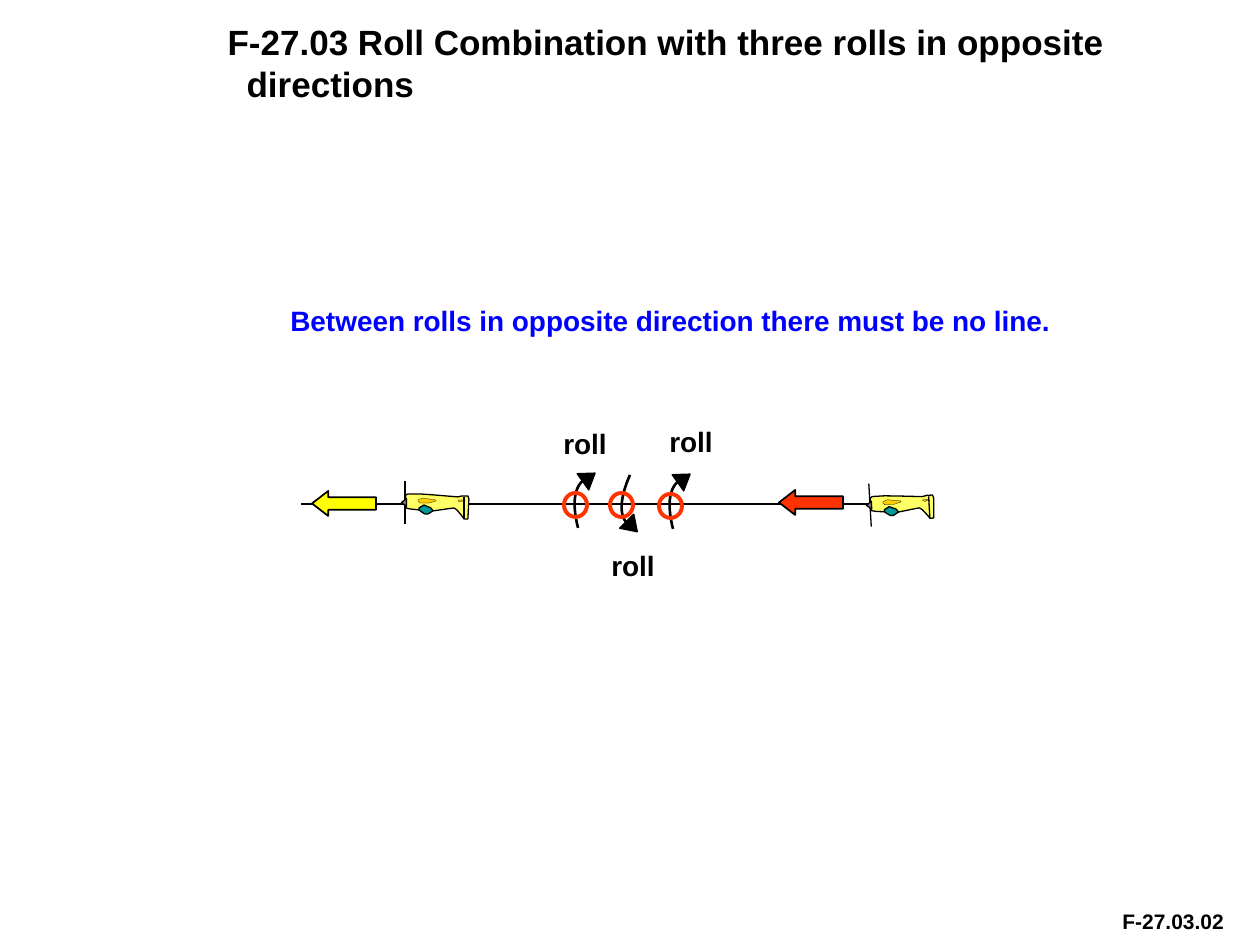
from lxml import etree
from pptx import Presentation
from pptx import util as u
from pptx.dml.color import RGBColor
from pptx.enum import shapes, text
from pptx.oxml.ns import qn

SCALE = u.Inches(1) / 126
BLACK, RED, GOLD = "000000", "FF3300", "FFCC00"

FUSELAGE = [(14, 29), (5, 28), (1, 27), (0, 25), (0, 19), (1, 14), (3, 13), (15, 13),
            (29, 14), (53, 16), (57, 15), (63, 15), (64, 18), (63, 38), (59, 38),
            (57, 35), (52, 29), (49, 27), (28, 30), (26, 28), (19, 25), (16, 26)]
WING = [(28, 30), (26, 27), (19, 24), (14, 27), (14, 29), (18, 32), (20, 33), (23, 33)]
FAR_WING = [(31, 19), (31, 20), (24, 22), (15, 22), (13, 20), (13, 19), (15, 18),
            (18, 17), (24, 18)]
TAILPLANE = [(60, 20), (57, 19), (53, 19), (53, 20), (55, 21), (57, 20)]
PLANE_PARTS = [(FUSELAGE, "FFFF66", 0.75), (WING, "009999", 0.75),
               (FAR_WING, GOLD, 0.13), (TAILPLANE, GOLD, 0.13)]
PLANE_LINES = [((0, 0), (0, 21)), ((59, 16), (59, 38)), ((0, 22), (0, 43))]

ROLL_UP = {"curve": [(14, 35), (8, 11), (10, -6), (20, -13)],
           "tip": (15, -23), "angle": 54.5}
ROLL_DOWN = {"curve": [(20, -18), (10, 5), (9, 22), (17, 30)],
             "tip": (12, 26), "angle": 135}


def px(length):
    """Turn a length in px into EMU."""
    return u.Emu(round(length * SCALE))


def colour(value):
    """Turn a hex string into a colour."""
    return RGBColor.from_string(value)


def shift(points, x, y):
    """Move points by an offset."""
    return [(x + left, y + top) for left, top in points]


def paint(shape, fill, line, width):
    """Give a shape its fill and line, without shadow."""
    shape.shadow.inherit = False
    if fill:
        shape.fill.solid()
        shape.fill.fore_color.rgb = colour(fill)
    else:
        shape.fill.background()
    shape.line.color.rgb = colour(line)
    shape.line.width = u.Pt(width)


def add_preset(parent, kind, box, fill=None, line=BLACK, width=0.75, angle=0):
    """Add a preset shape in a px box."""
    shape = parent.shapes.add_shape(kind, *map(px, box))
    paint(shape, fill, line, width)
    shape.rotation = angle
    return shape


def add_outline(parent, points, fill=None, width=0.75, close=True):
    """Add a freeform through px points."""
    start, *rest = [(px(x), px(y)) for x, y in points]
    builder = parent.shapes.build_freeform(*start, scale=1.0)
    builder.add_line_segments(rest, close=close)
    paint(builder.convert_to_shape(), fill, BLACK, width)


def add_line(parent, start, end):
    """Add a thin straight line between two px points."""
    line = parent.shapes.add_connector(
        shapes.MSO_CONNECTOR.STRAIGHT, *map(px, start + end))
    line.line.color.rgb = colour(BLACK)
    line.line.width = u.Pt(0.75)
    etree.SubElement(line._element.spPr, qn("a:effectLst"))


def write(shape, words, size, ink=BLACK, align=text.PP_ALIGN.LEFT):
    """Write one bold paragraph into a text shape."""
    frame = shape.text_frame
    layout = {"word_wrap": True, "auto_size": text.MSO_AUTO_SIZE.NONE,
              "vertical_anchor": text.MSO_ANCHOR.TOP}
    for name, value in layout.items():
        setattr(frame, name, value)
    paragraph = frame.paragraphs[0]
    paragraph.alignment = align
    run = paragraph.add_run()
    run.text = words
    for name, value in {"name": "Arial", "size": u.Pt(size), "bold": True}.items():
        setattr(run.font, name, value)
    run.font.color.rgb = colour(ink)
    return paragraph


def add_text(slide, box, words, size, **style):
    """Add a text box in a px box."""
    write(slide.shapes.add_textbox(*map(px, box)), words, size, **style)


def set_title(slide, words):
    """Place the title with a hanging indent."""
    title = slide.shapes.title
    place = dict(zip(("left", "top", "width", "height"), map(px, (141, 14, 1087, 139))))
    for name, value in place.items():
        setattr(title, name, value)
    properties = write(title, words, 20)._p.get_or_add_pPr()
    for name, length in {"marL": 93, "indent": -19}.items():
        properties.set(name, str(px(length)))


def add_plane(slide, x, y, tilt=0):
    """Add an aeroplane flying left, grouped and tilted."""
    plane = slide.shapes.add_group_shape()
    for points, fill, width in PLANE_PARTS:
        add_outline(plane, shift(points, x, y), fill, width)
    for ends in PLANE_LINES:
        add_line(plane, *shift(ends, x, y))
    add_preset(plane, shapes.MSO_SHAPE.ISOSCELES_TRIANGLE, (x - 5, y + 19, 8, 5),
               "808080", angle=270)
    plane.rotation = tilt


def bezier(controls, steps=16):
    """Return points along a cubic curve."""
    def blend(axis, t):
        a, b, c, d = (point[axis] for point in controls)
        s = 1 - t
        return a * s**3 + 3 * b * s * s * t + 3 * c * s * t * t + d * t**3
    return [(blend(0, i / steps), blend(1, i / steps)) for i in range(steps + 1)]


def add_roll(slide, x, y, turn, label):
    """Add a roll: curved arrow, ring and label."""
    add_outline(slide, shift(bezier(turn["curve"]), x, y), width=1.5, close=False)
    tip = shift([turn["tip"]], x, y)[0]
    add_preset(slide, shapes.MSO_SHAPE.ISOSCELES_TRIANGLE, tip + (20, 15), BLACK,
               angle=turn["angle"])
    add_preset(slide, shapes.MSO_SHAPE.OVAL, (x, y, 23, 24), line=RED, width=2.25)
    add_text(slide, label + (160, 47), "roll", 16, align=text.PP_ALIGN.CENTER)


def add_heading_arrow(slide, x, y, fill):
    """Add a block arrow showing the flight direction."""
    arrow = add_preset(slide, shapes.MSO_SHAPE.LEFT_ARROW, (x, y, 64, 25), fill, width=1)
    arrow.adjustments[0] = 0.5
    arrow.adjustments[1] = 0.65


def main():
    """Build the slide and save it."""
    deck = Presentation()
    deck.slide_width, deck.slide_height = px(1260), px(945)
    slide = deck.slides.add_slide(deck.slide_layouts[5])
    set_title(slide, "F-27.03 Roll Combination with three rolls in opposite directions")
    add_line(slide, (897, 504), (301, 504))
    add_plane(slide, 870, 482, tilt=-3.3)
    add_heading_arrow(slide, 779, 490, RED)
    add_plane(slide, 405, 481)
    add_heading_arrow(slide, 312, 491, "FFFF00")
    add_roll(slide, 564, 493, ROLL_UP, (505, 420))
    add_roll(slide, 610, 493, ROLL_DOWN, (553, 542))
    add_roll(slide, 659, 494, ROLL_UP, (611, 418))
    add_text(slide, (278, 297, 806, 47),
             "Between rolls in opposite direction there must be no line.", 16, ink="0000FF")
    add_text(slide, (1110, 902, 130, 38), "F-27.03.02", 12)
    deck.save("out.pptx")


if __name__ == "__main__":
    main()
